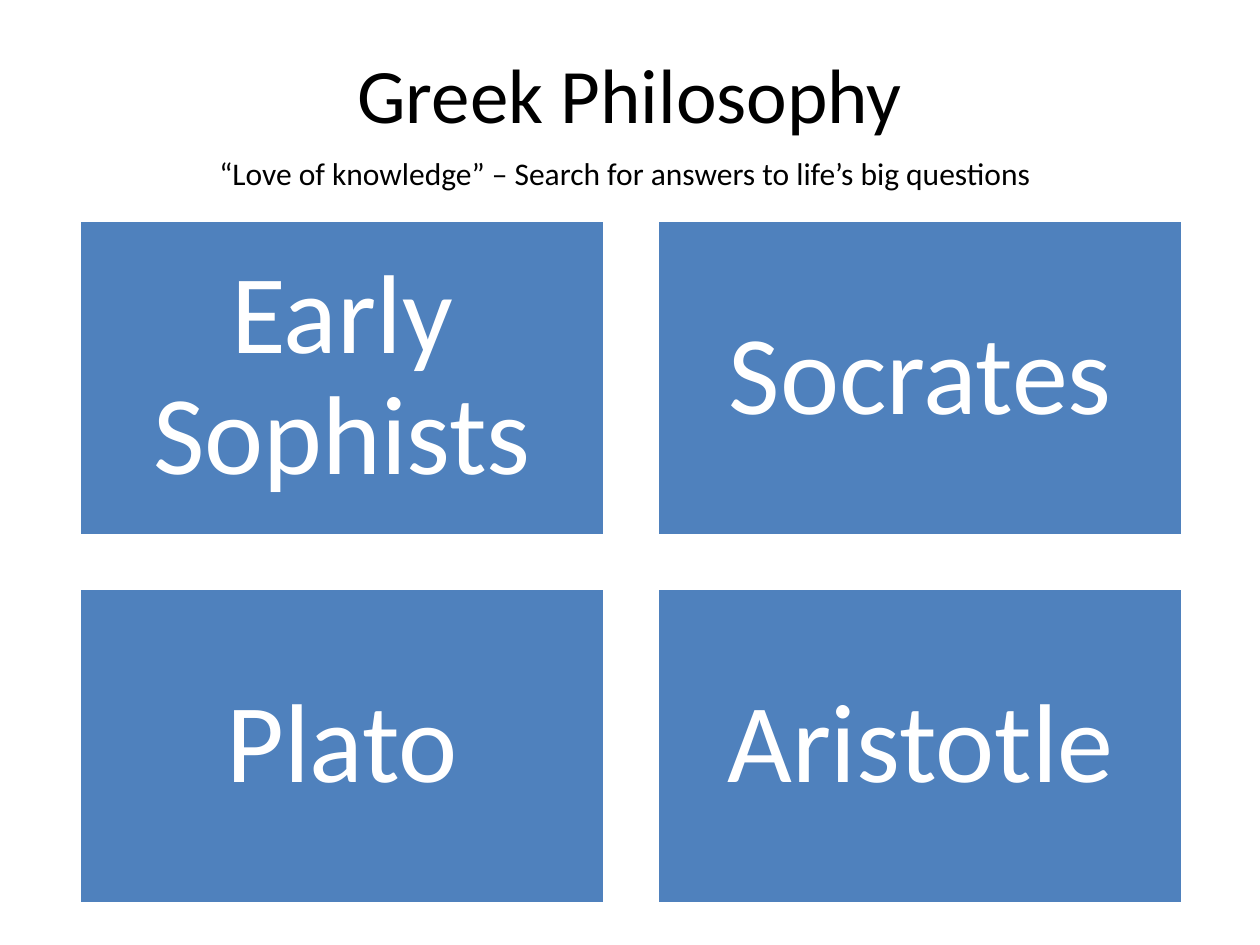
from itertools import product

from pptx import Presentation
from pptx.dml.color import RGBColor
from pptx.enum.shapes import MSO_SHAPE as Shape
from pptx.enum.text import MSO_ANCHOR as Anchor, MSO_AUTO_SIZE as Fit, PP_ALIGN as Align
from pptx.util import Inches, Pt


def color(code):
    return RGBColor.from_string(code)


def write(frame, text, size=18, fill="000000", font="Calibri",
          anchor=Anchor.TOP, inset=None, space=None):
    frame.word_wrap = True
    frame.vertical_anchor = anchor
    if inset is not None:
        frame.margin_left = frame.margin_right = Inches(inset)
        frame.margin_top = frame.margin_bottom = Inches(inset)
    para = frame.paragraphs[0]
    para.alignment = Align.CENTER
    if space:
        para.line_spacing = space
    run = para.add_run()
    run.text = text
    run.font.name = font
    run.font.size = Pt(size)
    run.font.color.rgb = color(fill)


class Page:
    blue = "4F81BD"
    white = "FFFFFF"

    def __init__(self, deck):
        self.slide = deck.slides.add_slide(deck.slide_layouts[5])

    def title(self, text, *area):
        head = self.slide.shapes.title
        head.left, head.top, head.width, head.height = map(Inches, area)
        head.text_frame.auto_size = Fit.NONE
        write(head.text_frame, text, size=44, anchor=Anchor.MIDDLE)

    def note(self, text, *area):
        box = self.slide.shapes.add_textbox(*map(Inches, area))
        write(box.text_frame, text)
        box.text_frame.auto_size = Fit.SHAPE_TO_FIT_TEXT

    def card(self, text, *area):
        box = self.slide.shapes.add_shape(Shape.RECTANGLE, *map(Inches, area))
        box.shadow.inherit = False
        box.fill.solid()
        box.fill.fore_color.rgb = color(self.blue)
        box.line.color.rgb = color(self.white)
        box.line.width = Pt(2)
        write(box.text_frame, text, size=64, fill=self.white,
              anchor=Anchor.MIDDLE, inset=0.27, space=0.9)


def main():
    deck = Presentation()
    deck.slide_width, deck.slide_height = Inches(10), Inches(7.5)
    page = Page(deck)
    page.title("Greek Philosophy", 0.5, 0.3, 9, 0.87)

    left, top, wide, high, gap = 0.63, 1.75, 4.17, 2.5, 0.42
    names = ["Early Sophists", "Socrates", "Plato", "Aristotle"]
    for name, (row, col) in zip(names, product(range(2), repeat=2)):
        page.card(name, left + col * (wide + gap), top + row * (high + gap), wide, high)

    page.note("“Love of knowledge” – Search for answers to life’s big questions",
              0.5, 1.17, 8.92, 0.4)
    deck.save("out.pptx")


if __name__ == "__main__":
    main()
